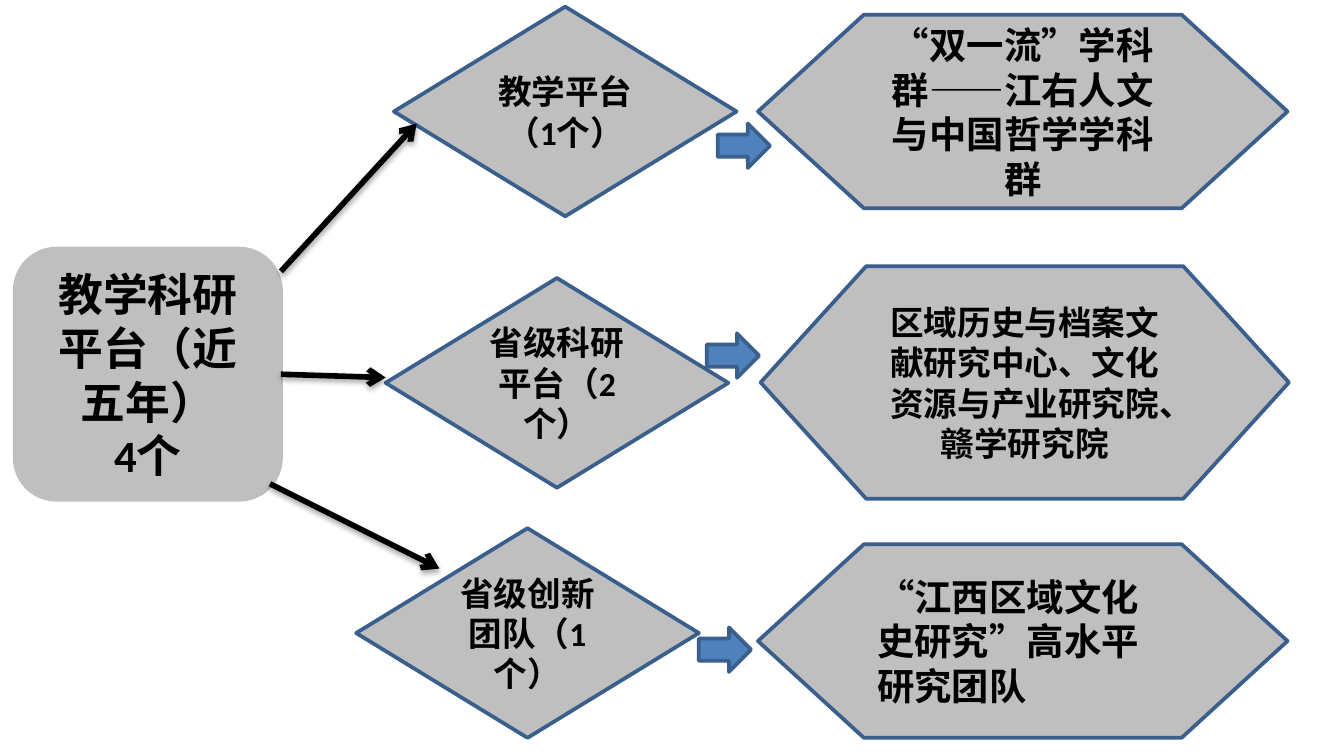
from dataclasses import dataclass

from lxml import etree
from pptx import Presentation
from pptx.dml.color import RGBColor
from pptx.enum import shapes, text
from pptx.oxml import ns
from pptx.util import Pt


@dataclass(frozen=True)
class Theme:
    font: str = "Calibri"
    ink: str = "000000"
    panel: str = "BFBFBF"
    outline: str = "3A5F8C"
    accent: str = "4F81BD"
    root_size: int = 24
    large_size: int = 20
    body_size: int = 18
    outline_width: int = 2
    link_width: int = 3


class Diagram:
    def __init__(self, slide, theme):
        self.slide = slide
        self.theme = theme

    def _preset(self, kind, box, fill, outline):
        node = self.slide.shapes.add_shape(kind, *map(Pt, box))
        node.shadow.inherit = False
        node.fill.solid()
        node.fill.fore_color.rgb = RGBColor.from_string(fill)
        node.line.color.rgb = RGBColor.from_string(outline)
        node.line.width = Pt(self.theme.outline_width)
        return node

    def node(self, kind, box, lines, size, outline=None, align=text.PP_ALIGN.CENTER):
        theme = self.theme
        node = self._preset(kind, box, theme.panel, outline or theme.outline)
        frame = node.text_frame
        frame.word_wrap = True
        frame.vertical_anchor = text.MSO_ANCHOR.MIDDLE
        frame.text = "\n".join(lines)
        style = {"name": theme.font, "size": Pt(size), "bold": True}
        for paragraph in frame.paragraphs:
            paragraph.alignment = align
            for run in paragraph.runs:
                for key, value in style.items():
                    setattr(run.font, key, value)
                run.font.color.rgb = RGBColor.from_string(theme.ink)
        return node

    def block_arrow(self, left, top):
        self._preset(shapes.MSO_SHAPE.RIGHT_ARROW, (left, top, 28, 23.8),
                     self.theme.accent, self.theme.outline)

    def link(self, start, end):
        link = self.slide.shapes.add_connector(
            shapes.MSO_CONNECTOR.STRAIGHT, *map(Pt, start + end))
        link.line.color.rgb = RGBColor.from_string(self.theme.ink)
        link.line.width = Pt(self.theme.link_width)
        etree.SubElement(link.line._get_or_add_ln(), ns.qn("a:tailEnd"), type="arrow")
        effects = etree.SubElement(link._element.spPr, ns.qn("a:effectLst"))
        shadow = etree.SubElement(
            effects, ns.qn("a:outerShdw"), blurRad=str(Pt(3.1)), dist=str(Pt(1.8)),
            dir="5400000", rotWithShape="0")
        color = etree.SubElement(shadow, ns.qn("a:srgbClr"), val=self.theme.ink)
        etree.SubElement(color, ns.qn("a:alpha"), val="35000")
        return link


def main():
    deck = Presentation()
    deck.slide_width, deck.slide_height = Pt(720), Pt(405)
    theme = Theme()
    diagram = Diagram(deck.slides.add_slide(deck.slide_layouts[6]), theme)
    kinds = shapes.MSO_SHAPE
    center, left = text.PP_ALIGN.CENTER, text.PP_ALIGN.LEFT

    platforms = diagram.node(
        kinds.FLOWCHART_ALTERNATE_PROCESS, (7.9, 133.2, 142.6, 134.6),
        ["教学科研平台（近五年）", "4个"], theme.root_size, theme.panel)

    categories = [
        ("教学平台（1个）", (211, 3.6)),
        ("省级科研平台（2个）", (206.6, 149)),
        ("省级创新团队（1个）", (190.8, 283)),
    ]
    for label, corner in categories:
        diagram.node(kinds.FLOWCHART_DECISION, corner + (183.6, 112.3),
                     [label], theme.body_size)

    details = [
        ("“双一流”学科群——江右人文与中国哲学学科群",
         (406.1, 7.9, 283.7, 103.7), theme.large_size, center),
        ("区域历史与档案文献研究中心、文化资源与产业研究院、赣学研究院",
         (407.5, 142.6, 283, 124.6), theme.body_size, center),
        ("“江西区域文化史研究”高水平研究团队",
         (406.1, 291.6, 283.7, 103.7), theme.large_size, left),
    ]
    for label, box, size, align in details:
        diagram.node(kinds.FLOWCHART_PREPARATION, box, [label], size, align=align)

    diagram.link((150.5, 145.4), (223.2, 66.2))
    research_link = diagram.link((150.5, 200.5), (206.6, 202.3))
    research_link.begin_connect(platforms, 3)
    diagram.link((144.7, 259.2), (235.4, 304.6))

    for corner in [(384.5, 66.2), (378.7, 178.6), (374.4, 336.2)]:
        diagram.block_arrow(*corner)

    deck.save("out.pptx")


if __name__ == "__main__":
    main()
